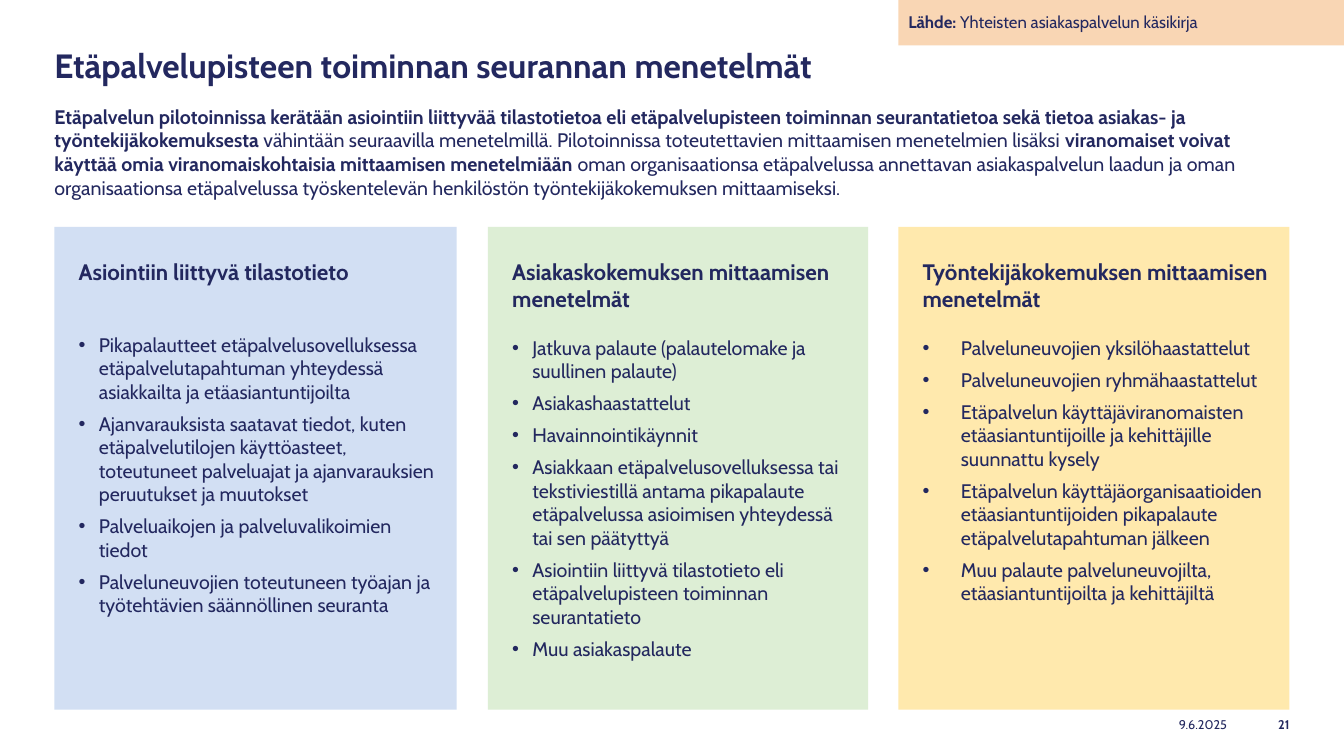
from dataclasses import dataclass

from lxml.etree import SubElement
from pptx import Presentation
from pptx.dml.color import RGBColor
from pptx.enum.shapes import MSO_SHAPE as Kind
from pptx.enum.text import MSO_ANCHOR as Anchor, MSO_AUTO_SIZE as Auto, PP_ALIGN as Align
from pptx.oxml.ns import qn
from pptx.util import Inches, Pt

FONT = "Cabin"
INK = "23285F"
LEFT, WIDE = 0.54, 12.25
TOP, HIGH = 2.25, 4.79


@dataclass
class Card:
    left: float
    width: float
    fill: str
    head: str
    gap: int
    indent: float
    items: list[str]


CARDS = [
    Card(LEFT, 3.99, "D2DFF3", "Asiointiin liittyvä tilastotieto", 34, 0.2, [
        "Pikapalautteet etäpalvelusovelluksessa etäpalvelutapahtuman yhteydessä "
        "asiakkailta ja etäasiantuntijoilta",
        "Ajanvarauksista saatavat tiedot, kuten etäpalvelutilojen käyttöasteet, "
        "toteutuneet palveluajat ja ajanvarauksien peruutukset ja muutokset",
        "Palveluaikojen ja palveluvalikoimien tiedot",
        "Palveluneuvojien toteutuneen työajan ja työtehtävien säännöllinen seuranta",
    ]),
    Card(4.84, 3.77, "DDEED5", "Asiakaskokemuksen mittaamisen menetelmät", 17, 0.2, [
        "Jatkuva palaute (palautelomake ja suullinen palaute)",
        "Asiakashaastattelut",
        "Havainnointikäynnit",
        "Asiakkaan etäpalvelusovelluksessa tai tekstiviestillä antama pikapalaute "
        "etäpalvelussa asioimisen yhteydessä tai sen päätyttyä",
        "Asiointiin liittyvä tilastotieto eli etäpalvelupisteen toiminnan seurantatieto",
        "Muu asiakaspalaute",
    ]),
    Card(8.91, 3.88, "FFE9AD", "Työntekijäkokemuksen mittaamisen menetelmät", 17, 0.38, [
        "Palveluneuvojien yksilöhaastattelut",
        "Palveluneuvojien ryhmähaastattelut",
        "Etäpalvelun käyttäjäviranomaisten etäasiantuntijoille ja kehittäjille "
        "suunnattu kysely",
        "Etäpalvelun käyttäjäorganisaatioiden etäasiantuntijoiden pikapalaute "
        "etäpalvelutapahtuman jälkeen",
        "Muu palaute palveluneuvojilta, etäasiantuntijoilta ja kehittäjiltä",
    ]),
]

# Bold and regular parts alternate, bold first.
INTRO = [
    "Etäpalvelun pilotoinnissa kerätään asiointiin liittyvää tilastotietoa eli "
    "etäpalvelupisteen toiminnan seurantatietoa sekä tietoa asiakas- ja "
    "työntekijäkokemuksesta ",
    "vähintään seuraavilla menetelmillä. Pilotoinnissa toteutettavien mittaamisen "
    "menetelmien lisäksi ",
    "viranomaiset voivat käyttää omia viranomaiskohtaisia mittaamisen menetelmiään ",
    "oman organisaationsa etäpalvelussa annettavan asiakaspalvelun laadun ja oman "
    "organisaationsa etäpalvelussa työskentelevän henkilöstön työntekijäkokemuksen "
    "mittaamiseksi.",
]
SOURCE = ["Lähde: ", "Yhteisten asiakaspalvelun käsikirja"]


def color(code: str) -> RGBColor:
    return RGBColor.from_string(code)


def style(run, size: float, bold: bool) -> None:
    font = run.font
    font.name, font.size, font.bold = FONT, Pt(size), bold
    font.color.rgb = color(INK)


def write(para, text: str, size: float, bold: bool = False, align=Align.LEFT) -> None:
    para.text = text
    para.alignment = align
    style(para.runs[0], size, bold)


def mix(para, parts: list[str], size: float) -> None:
    """Write parts as runs that are bold and regular in turn."""
    para.alignment = Align.LEFT
    for i, part in enumerate(parts):
        run = para.add_run()
        run.text = part
        style(run, size, i % 2 == 0)


def setup(shape, anchor=Anchor.TOP, inset=(0, 0, 0, 0)):
    """Set wrap, anchor and insets, and return the text frame."""
    frame = shape.text_frame
    frame.word_wrap = True
    frame.auto_size = Auto.NONE
    frame.vertical_anchor = anchor
    (frame.margin_left, frame.margin_top,
     frame.margin_right, frame.margin_bottom) = map(Inches, inset)
    return frame


def add_text(slide, left: float, top: float, width: float, height: float,
             anchor=Anchor.TOP):
    box = slide.shapes.add_textbox(*map(Inches, (left, top, width, height)))
    return setup(box, anchor)


def add_rect(slide, left: float, top: float, width: float, height: float, fill: str):
    rect = slide.shapes.add_shape(
        Kind.RECTANGLE, *map(Inches, (left, top, width, height)))
    rect.shadow.inherit = False
    rect.fill.solid()
    rect.fill.fore_color.rgb = color(fill)
    rect.line.fill.background()
    return rect


def bullet(para, indent: float) -> None:
    props = para._p.get_or_add_pPr()
    props.set("marL", str(Inches(indent)))
    props.set("indent", str(-Inches(indent)))
    SubElement(props, qn("a:buFont"), typeface="Arial")
    SubElement(props, qn("a:buChar"), char="•")


def add_card(slide, card: Card) -> None:
    rect = add_rect(slide, card.left, TOP, card.width, HIGH, card.fill)
    frame = setup(rect, inset=(0.24, 0.31, 0.12, 0))
    write(frame.paragraphs[0], card.head, 16, True)
    for i, item in enumerate(card.items):
        para = frame.add_paragraph()
        write(para, item, 14)
        para.space_before = Pt(6 if i else card.gap)
        bullet(para, card.indent)


def main() -> None:
    deck = Presentation()
    deck.slide_width, deck.slide_height = Inches(13.33), Inches(7.5)
    slide = deck.slides.add_slide(deck.slide_layouts[5])

    title = slide.shapes.title
    title.left, title.top = Inches(LEFT), Inches(0.49)
    title.width, title.height = Inches(WIDE), Inches(0.55)
    para = setup(title).paragraphs[0]
    write(para, "Etäpalvelupisteen toiminnan seurannan menetelmät", 24, True)
    para.line_spacing = 0.9

    para = add_text(slide, LEFT, 1.04, WIDE, 1.17).paragraphs[0]
    mix(para, INTRO, 14)
    para.space_before = Pt(2)

    for card in CARDS:
        add_card(slide, card)

    for left, width, text, bold in ((10.37, 1.8, "9.6.2025", False),
                                    (12.49, 0.3, "21", True)):
        frame = add_text(slide, left, 7.07, width, 0.23, Anchor.MIDDLE)
        write(frame.paragraphs[0], text, 9, bold, Align.RIGHT)

    tag = add_rect(slide, 8.91, -0.01, 4.42, 0.46, "F9D6B4")
    frame = setup(tag, Anchor.MIDDLE, (0.1, 0.05, 0.1, 0.05))
    mix(frame.paragraphs[0], SOURCE, 12)

    deck.save("out.pptx")


if __name__ == "__main__":
    main()
